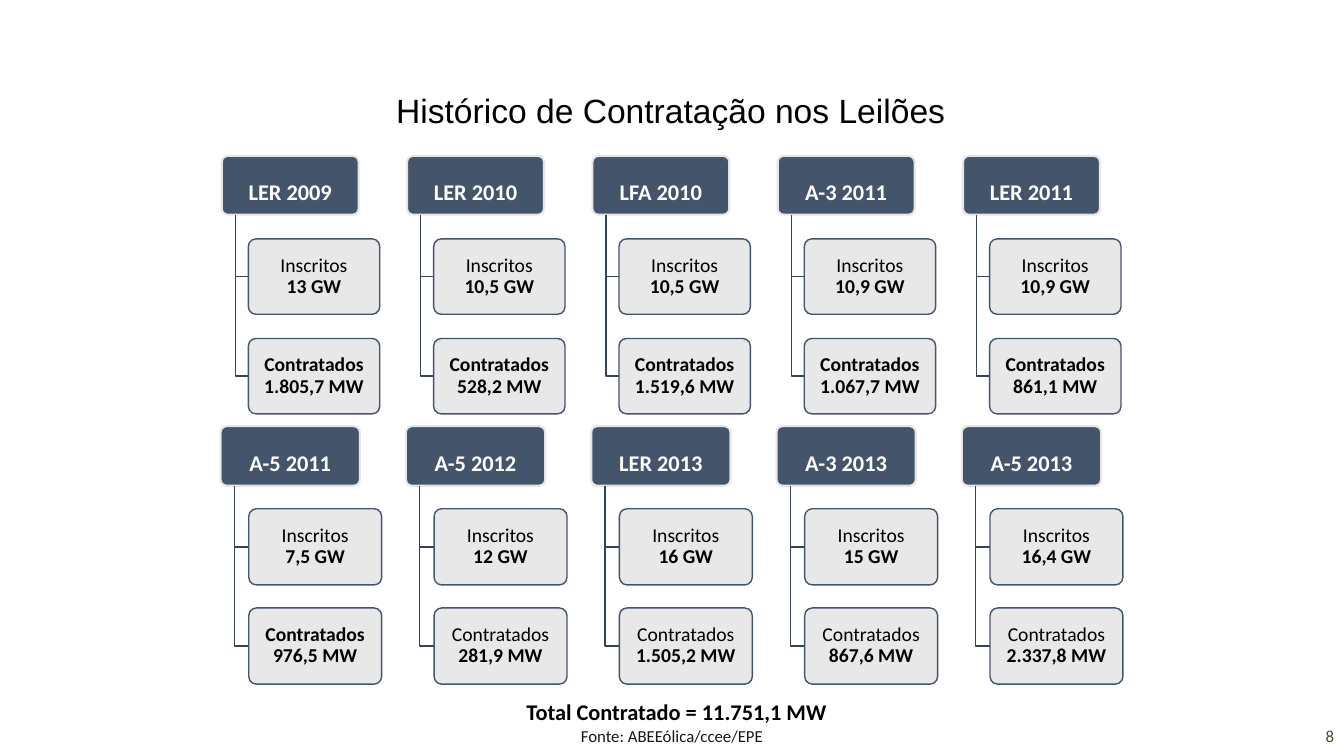
"""Build the slide on the history of wind power contracted in auctions."""
from typing import NamedTuple

from lxml import etree
from pptx import Presentation
from pptx.dml.color import RGBColor
from pptx.enum.shapes import MSO_SHAPE as Preset
from pptx.enum.text import MSO_ANCHOR as Anchor, PP_ALIGN as Align
from pptx.oxml.ns import qn
from pptx.util import Cm, Pt

NAVY = RGBColor(0x44, 0x54, 0x6A)
BRANCH = RGBColor(0x36, 0x43, 0x55)
PALE = RGBColor(0xE7, 0xE6, 0xE6)
GREEN = RGBColor(0x38, 0x57, 0x23)
INK = RGBColor(0x18, 0x17, 0x17)
BLACK = RGBColor(0, 0, 0)
WHITE = RGBColor(0xFF, 0xFF, 0xFF)

COLUMN_PITCH = 4.67


class Row(NamedTuple):
    left: float
    top: float
    header_size: tuple
    trunk_inset: float
    card_left: float
    card_tops: tuple
    card_size: tuple


FIRST_ROW = Row(5.59, 3.93, (3.45, 1.48), 0.34, 6.26, (6.02, 8.53), (3.31, 1.9))
SECOND_ROW = Row(5.56, 10.74, (3.51, 1.5), 0.35, 6.27, (12.82, 15.32), (3.35, 1.92))

FIRST_AUCTIONS = [
    ("LER 2009", "13 GW", "1.805,7 MW", True),
    ("LER 2010", "10,5 GW", "528,2 MW", True),
    ("LFA 2010", "10,5 GW", "1.519,6 MW", True),
    ("A-3 2011", "10,9 GW", "1.067,7 MW", True),
    ("LER 2011", "10,9 GW", "861,1 MW", True),
]
SECOND_AUCTIONS = [
    ("A-5 2011", "7,5 GW", "976,5 MW", True),
    ("A-5 2012", "12 GW", "281,9 MW", False),
    ("LER 2013", "16 GW", "1.505,2 MW", False),
    ("A-3 2013", "15 GW", "867,6 MW", False),
    ("A-5 2013", "16,4 GW", "2.337,8 MW", False),
]


def style(paragraph, size, color, bold=None, align=Align.CENTER, face="Calibri"):
    """Set the alignment and font of a paragraph."""
    paragraph.alignment = align
    font = paragraph.font
    font.name, font.size, font.bold = face, Pt(size), bold
    font.color.rgb = color


def add_title(slide, text):
    """Fill and place the title placeholder."""
    title = slide.shapes.title
    title.left, title.top, title.width, title.height = Cm(0.91), Cm(2.11), Cm(31.98), Cm(1.45)
    title.text_frame.text = text
    title.text_frame.vertical_anchor = Anchor.MIDDLE
    paragraph = title.text_frame.paragraphs[0]
    paragraph.line_spacing = 0.9
    style(paragraph, 24, BLACK, face="Arial")


def add_label(slide, text, left, top, width, height, size, color, bold=None, align=Align.CENTER):
    """Add a one-line text box."""
    frame = slide.shapes.add_textbox(Cm(left), Cm(top), Cm(width), Cm(height)).text_frame
    frame.word_wrap = True
    frame.vertical_anchor = Anchor.MIDDLE
    frame.text = text
    style(frame.paragraphs[0], size, color, bold, align)


def add_box(slide, left, top, size, fill, line, line_width):
    """Add a rounded box and return it."""
    width, height = size
    box = slide.shapes.add_shape(Preset.ROUNDED_RECTANGLE, Cm(left), Cm(top), Cm(width), Cm(height))
    box.adjustments[0] = 0.1
    box.shadow.inherit = False
    box.fill.solid()
    box.fill.fore_color.rgb = fill
    box.line.color.rgb = line
    box.line.width = Pt(line_width)
    frame = box.text_frame
    frame.word_wrap = True
    frame.vertical_anchor = Anchor.MIDDLE
    frame.margin_left = frame.margin_right = Cm(0.13)
    frame.margin_top = frame.margin_bottom = Cm(0.1)
    return box


def add_header(slide, left, top, size, name):
    """Add the dark box that names an auction."""
    paragraph = add_box(slide, left, top, size, NAVY, PALE, 1.5).text_frame.paragraphs[0]
    paragraph.text = name
    paragraph.line_spacing = 1.5
    style(paragraph, 16, WHITE, True)


def add_card(slide, left, top, size):
    """Add a pale, slightly transparent box and return its paragraph."""
    card = add_box(slide, left, top, size, PALE, NAVY, 1)
    color = card.fill._xPr.find(qn("a:solidFill"))[0]
    etree.SubElement(color, qn("a:alpha")).set("val", "90000")
    paragraph = card.text_frame.paragraphs[0]
    paragraph.line_spacing = 0.9
    style(paragraph, 14, BLACK)
    return paragraph


def add_run(paragraph, text, bold):
    """Add a run of the given weight."""
    run = paragraph.add_run()
    run.text = text
    run.font.bold = bold


def add_branch(slide, trunk, top, card_left, middle):
    """Draw the elbow from a header down to a card."""
    builder = slide.shapes.build_freeform(Cm(trunk), Cm(top))
    builder.add_line_segments([(Cm(trunk), Cm(middle)), (Cm(card_left), Cm(middle))], close=False)
    branch = builder.convert_to_shape()
    branch.shadow.inherit = False
    branch.fill.background()
    branch.line.color.rgb = BRANCH
    branch.line.width = Pt(1)


def add_auction(slide, row, column, auction):
    """Add an auction header with its two branches and cards."""
    name, registered, contracted, bold_label = auction
    shift = column * COLUMN_PITCH
    left, card_left = row.left + shift, row.card_left + shift
    add_header(slide, left, row.top, row.header_size, name)
    cards = []
    for card_top in row.card_tops:
        add_branch(slide, left + row.trunk_inset, row.top + row.header_size[1],
                   card_left, card_top + row.card_size[1] / 2)
        cards.append(add_card(slide, card_left, card_top, row.card_size))
    registered_text, contracted_text = cards
    add_run(registered_text, "Inscritos", False)
    registered_text.add_line_break()
    add_run(registered_text, registered, True)
    add_run(contracted_text, "Contratados ", bold_label)
    add_run(contracted_text, contracted, True)


def main():
    """Build and save the slide."""
    deck = Presentation()
    deck.slide_width, deck.slide_height = Cm(33.87), Cm(19.05)
    slide = deck.slides.add_slide(deck.slide_layouts[5])
    add_title(slide, "Histórico de Contratação nos Leilões")
    add_label(slide, "Fonte: ABEEólica/ccee/EPE", 11.22, 18.03, 11.43, 1.02, 12, INK)
    add_label(slide, "8", 26.25, 18.03, 7.62, 1.02, 12, GREEN, align=Align.RIGHT)
    for row, auctions in ((SECOND_ROW, SECOND_AUCTIONS), (FIRST_ROW, FIRST_AUCTIONS)):
        for column, auction in enumerate(auctions):
            add_auction(slide, row, column, auction)
    add_label(slide, "Total Contratado = 11.751,1 MW", 12.85, 17.45, 8.4, 0.94, 16, BLACK, True)
    deck.save("out.pptx")


if __name__ == "__main__":
    main()
